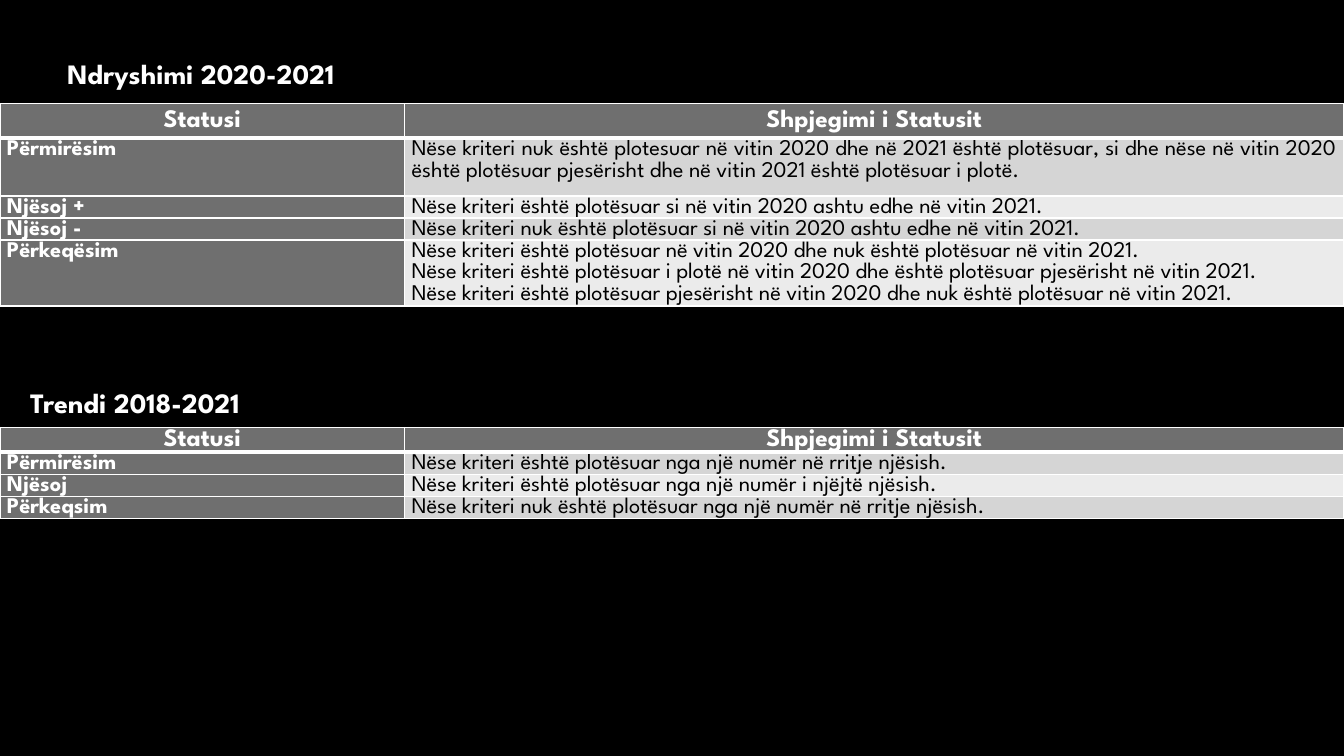
from lxml.etree import SubElement
from pptx import Presentation
from pptx.dml.color import RGBColor
from pptx.enum.text import MSO_ANCHOR, MSO_AUTO_SIZE, PP_ALIGN
from pptx.oxml.ns import qn
from pptx.util import Pt

FONT = "League Spartan"
WHITE, BLACK, GREY = "FFFFFF", "000000", "6F6F6F"
BANDS = ["D5D5D5", "EBEBEB"]
COL_WIDTHS = [289, 671]
HEADER = ("Statusi", "Shpjegimi i Statusit")

CHANGE_ROWS = [
    ("Përmirësim",
     "Nëse kriteri nuk është plotesuar në vitin 2020 dhe në 2021 është plotësuar, "
     "si dhe nëse në vitin 2020 është plotësuar pjesërisht dhe në vitin 2021 "
     "është plotësuar i plotë."),
    ("Njësoj +", "Nëse kriteri është plotësuar si në vitin 2020 ashtu edhe në vitin 2021."),
    ("Njësoj -", "Nëse kriteri nuk është plotësuar si në vitin 2020 ashtu edhe në vitin 2021."),
    ("Përkeqësim",
     "Nëse kriteri është plotësuar në vitin 2020 dhe nuk është plotësuar në vitin 2021.\n"
     "Nëse kriteri është plotësuar i plotë në vitin 2020 dhe është plotësuar pjesërisht "
     "në vitin 2021.\n"
     "Nëse kriteri është plotësuar pjesërisht në vitin 2020 dhe nuk është plotësuar "
     "në vitin 2021."),
]
TREND_ROWS = [
    ("Përmirësim", "Nëse kriteri është plotësuar nga një numër në rritje njësish."),
    ("Njësoj", "Nëse kriteri është plotësuar nga një numër i njëjtë njësish."),
    ("Përkeqsim", "Nëse kriteri nuk është plotësuar nga një numër në rritje njësish."),
]


def rgb(color):
    return RGBColor.from_string(color)


def write(tf, text, size=16, color=WHITE, bold=True, align=PP_ALIGN.LEFT, spacing=1.0):
    """Fill a text frame, one paragraph per line of text."""
    for i, line in enumerate(text.split("\n")):
        p = tf.add_paragraph() if i else tf.paragraphs[0]
        p.alignment = align
        p.line_spacing = spacing
        p.space_before = p.space_after = Pt(0)
        r = p.add_run()
        r.text = line
        r.font.name = FONT
        r.font.size = Pt(size)
        r.font.bold = bold
        r.font.color.rgb = rgb(color)


def set_borders(cell, **widths):
    """Draw white cell borders; widths are given in points by side L, R, T, B."""
    tcPr = cell._tc.get_or_add_tcPr()
    for i, (side, width) in enumerate(widths.items()):
        ln = SubElement(tcPr, qn(f"a:ln{side}"), w=str(Pt(width)))
        fill = SubElement(ln, qn("a:solidFill"))
        SubElement(fill, qn("a:srgbClr"), val=WHITE)
        tcPr.insert(i, ln)


def add_heading(sp, text, left, top, width, height):
    sp.left, sp.top, sp.width, sp.height = Pt(left), Pt(top), Pt(width), Pt(height)
    tf = sp.text_frame
    tf.word_wrap = True
    tf.auto_size = MSO_AUTO_SIZE.NONE
    tf.vertical_anchor = MSO_ANCHOR.BOTTOM
    write(tf, text, size=20)


def add_status_table(s, rows, left, top, heights, text_align):
    frame = s.shapes.add_table(len(rows) + 1, 2, Pt(left), Pt(top),
                               Pt(sum(COL_WIDTHS)), Pt(sum(heights)))
    table = frame.table
    for col, width in zip(table.columns, COL_WIDTHS):
        col.width = Pt(width)
    for i, (values, height) in enumerate(zip([HEADER] + rows, heights)):
        table.rows[i].height = Pt(height)
        for j, value in enumerate(values):
            cell = table.cell(i, j)
            cell.margin_left = cell.margin_right = Pt(5)
            cell.margin_top = cell.margin_bottom = Pt(0)
            is_text = i > 0 and j == 1
            cell.fill.solid()
            cell.fill.fore_color.rgb = rgb(BANDS[(i - 1) % 2] if is_text else GREY)
            set_borders(cell, L=1, R=1, T=3 if i == 1 else 1, B=3 if i == 0 else 1)
            if i == 0:
                cell.vertical_anchor = MSO_ANCHOR.MIDDLE
                write(cell.text_frame, value, size=18, align=PP_ALIGN.CENTER, spacing=1.07)
            elif is_text:
                write(cell.text_frame, value, color=BLACK, bold=False,
                      align=text_align, spacing=1.07)
            else:
                write(cell.text_frame, value, align=PP_ALIGN.JUSTIFY, spacing=1.07)


def main():
    prs = Presentation()
    prs.slide_width, prs.slide_height = Pt(960), Pt(540)
    s = prs.slides.add_slide(prs.slide_layouts[5])
    s.background.fill.solid()
    s.background.fill.fore_color.rgb = rgb(BLACK)

    add_status_table(s, CHANGE_ROWS, 0, 74, [24.6, 41.4, 15.7, 15.7, 47.2], PP_ALIGN.JUSTIFY)
    add_status_table(s, TREND_ROWS, 0, 305.3, [17.6, 15.7, 15.7, 15.7], PP_ALIGN.LEFT)
    add_heading(s.shapes.title, "Ndryshimi 2020-2021", 41, 36.7, 282, 31.5)
    trend_box = s.shapes.add_textbox(0, 0, 0, 0)
    add_heading(trend_box, "Trendi 2018-2021", 14.4, 271.4, 205, 31.5)
    prs.save("out.pptx")


if __name__ == "__main__":
    main()
